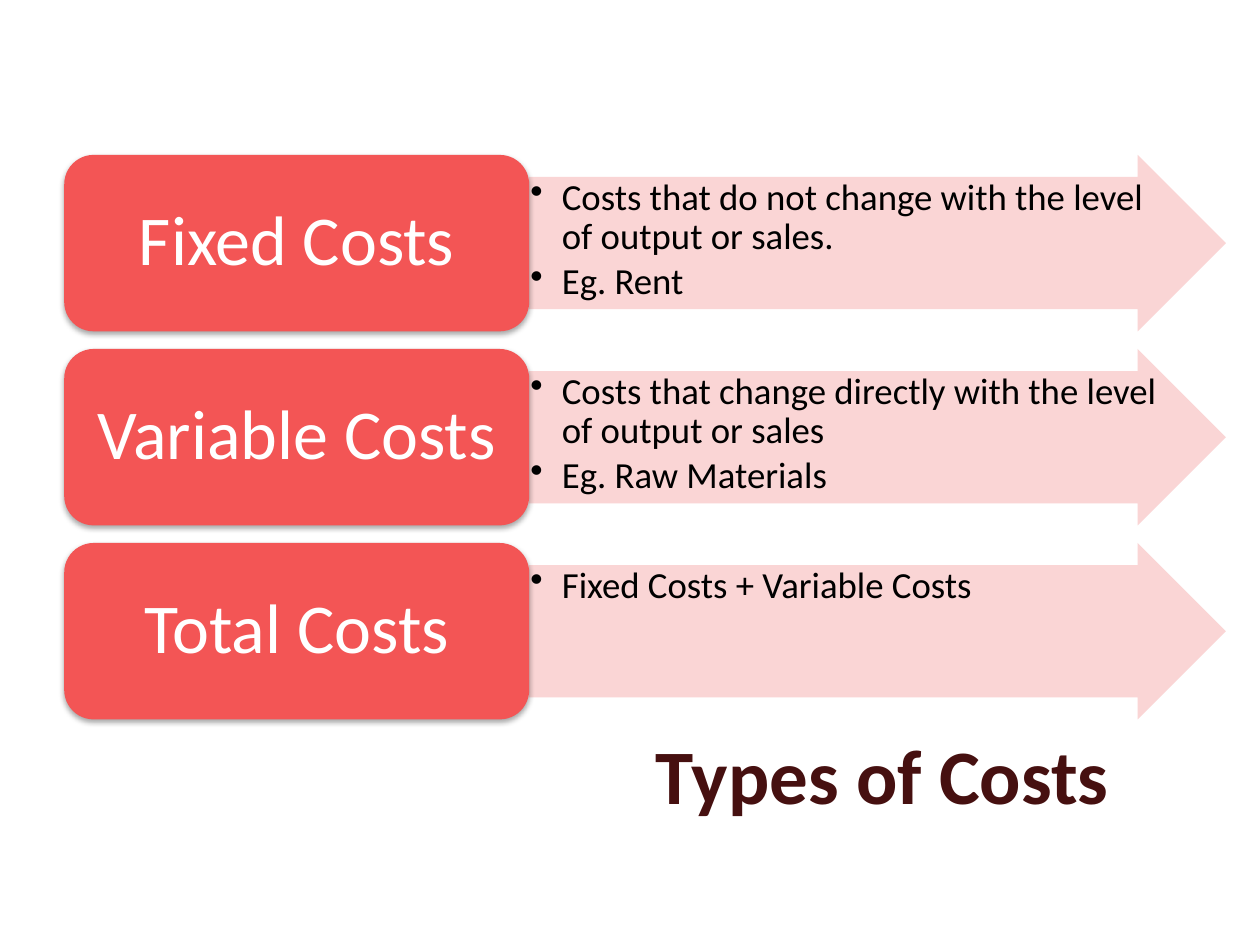
from dataclasses import dataclass

from lxml import etree
from pptx import Presentation
from pptx import util as u
from pptx.dml.color import RGBColor
from pptx.enum import shapes, text
from pptx.oxml.ns import qn


@dataclass(frozen=True)
class Theme:
    """Colours, font and type sizes of the slide."""
    font: str = "Calibri"
    title: str = "461010"
    label: str = "FFFFFF"
    detail: str = "000000"
    card: str = "F35555"
    arrow: str = "FAD1D1"
    shadow: str = "000000"
    title_size: int = 44
    label_size: int = 40
    detail_size: int = 21


def add_child(parent, tag, **attributes):
    """Append a DrawingML element with the given attributes."""
    child = etree.SubElement(parent, qn(tag))
    for key, value in attributes.items():
        child.set(key, str(value))
    return child


def write_text(box, lines, *, font, size, color, bold=False, bullet=False,
               align=text.PP_ALIGN.LEFT, anchor=text.MSO_ANCHOR.TOP,
               insets=(0.1, 0.05), line_spacing=None, space_after=None):
    """Fill a text box with one formatted paragraph per line."""
    frame = box.text_frame
    frame.word_wrap = True
    frame.vertical_anchor = anchor
    frame.margin_left = frame.margin_right = u.Inches(insets[0])
    frame.margin_top = frame.margin_bottom = u.Inches(insets[1])
    for index, line in enumerate(lines):
        paragraph = frame.paragraphs[0] if index == 0 else frame.add_paragraph()
        paragraph.text = line
        if bullet:
            properties = paragraph._p.get_or_add_pPr()
            properties.set("marL", str(u.Inches(0.25)))
            properties.set("indent", str(u.Inches(-0.25)))
            add_child(properties, "a:buChar", char="•")
            paragraph.level = 1
        paragraph.alignment = align
        paragraph.line_spacing = line_spacing
        paragraph.space_after = space_after
        run_font = paragraph.runs[0].font
        run_font.name = font
        run_font.size = u.Pt(size)
        run_font.bold = bold
        run_font.color.rgb = RGBColor.from_string(color)


class CostSlide:
    """Draws the parts of the slide in one theme."""

    def __init__(self, slide, theme):
        self.slide = slide
        self.theme = theme

    def shape(self, preset, color, left, top, width, height):
        """Add a plain filled shape without outline or shadow."""
        shape = self.slide.shapes.add_shape(
            preset, *map(u.Inches, (left, top, width, height)))
        shape.fill.solid()
        shape.fill.fore_color.rgb = RGBColor.from_string(color)
        shape.line.fill.background()
        shape.shadow.inherit = False
        return shape

    def arrow(self, *bounds):
        """Add a slightly transparent arrow."""
        arrow = self.shape(shapes.MSO_SHAPE.RIGHT_ARROW, self.theme.arrow, *bounds)
        arrow.adjustments[0] = 0.75
        arrow.adjustments[1] = 0.5
        tint = arrow._element.spPr.find(qn("a:solidFill"))[0]
        add_child(tint, "a:alpha", val=90000)

    def card(self, *bounds):
        """Add a rounded card with a soft shadow below it."""
        card = self.shape(shapes.MSO_SHAPE.ROUNDED_RECTANGLE, self.theme.card, *bounds)
        effects = card._element.spPr.find(qn("a:effectLst"))
        shadow = add_child(effects, "a:outerShdw", blurRad=u.Pt(3.1), dist=u.Pt(1.8),
                           dir=5400000, rotWithShape=0)
        shade = add_child(shadow, "a:srgbClr", val=self.theme.shadow)
        add_child(shade, "a:alpha", val=35000)

    def text(self, lines, left, top, width, height, **style):
        """Add a text box in the theme font."""
        box = self.slide.shapes.add_textbox(
            *map(u.Inches, (left, top, width, height)))
        write_text(box, lines, font=self.theme.font, **style)

    def title(self, wording, *bounds):
        """Add the slide title."""
        self.text([wording], *bounds, size=self.theme.title_size,
                  color=self.theme.title, bold=True, align=text.PP_ALIGN.CENTER,
                  anchor=text.MSO_ANCHOR.BOTTOM)

    def label(self, wording, *bounds):
        """Add the name of a cost type."""
        self.text([wording], *bounds, size=self.theme.label_size,
                  color=self.theme.label, align=text.PP_ALIGN.CENTER,
                  anchor=text.MSO_ANCHOR.MIDDLE, insets=(0.17, 0.08),
                  line_spacing=0.9)

    def details(self, lines, *bounds):
        """Add the bulleted explanation of a cost type."""
        self.text(lines, *bounds, size=self.theme.detail_size,
                  color=self.theme.detail, bullet=True, insets=(0.01, 0.01),
                  line_spacing=0.9, space_after=u.Pt(3))


COST_TYPES = [
    ("Fixed Costs", ["Costs that do not change with the level of output or sales.",
                     "Eg. Rent"]),
    ("Variable Costs", ["Costs that change directly with the level of output or sales",
                        "Eg. Raw Materials"]),
    ("Total Costs", ["Fixed Costs + Variable Costs"]),
]


def main():
    """Build the slide and save it."""
    deck = Presentation()
    deck.slide_width, deck.slide_height = u.Inches(10), u.Inches(7.5)
    costs = CostSlide(deck.slides.add_slide(deck.slide_layouts[6]), Theme())

    costs.title("Types of Costs", 4.84, 6.19, 4.33, 0.37)

    card_left, card_width, arrow_width = 0.51, 3.69, 5.53
    first_top, row_height, row_gap = 1.23, 1.4, 0.14
    arrow_left = card_left + card_width
    label_pad = 0.07
    shaft_pad = row_height / 8
    for row, (name, explanation) in enumerate(COST_TYPES):
        top = first_top + row * (row_height + row_gap)
        costs.arrow(arrow_left, top, arrow_width, row_height)
        costs.details(explanation, arrow_left, top + shaft_pad, 5,
                      row_height - 2 * shaft_pad)
        costs.card(card_left, top, card_width, row_height)
        costs.label(name, card_left + label_pad, top + label_pad,
                    card_width - 2 * label_pad, row_height - 2 * label_pad)

    deck.save("out.pptx")


if __name__ == "__main__":
    main()
